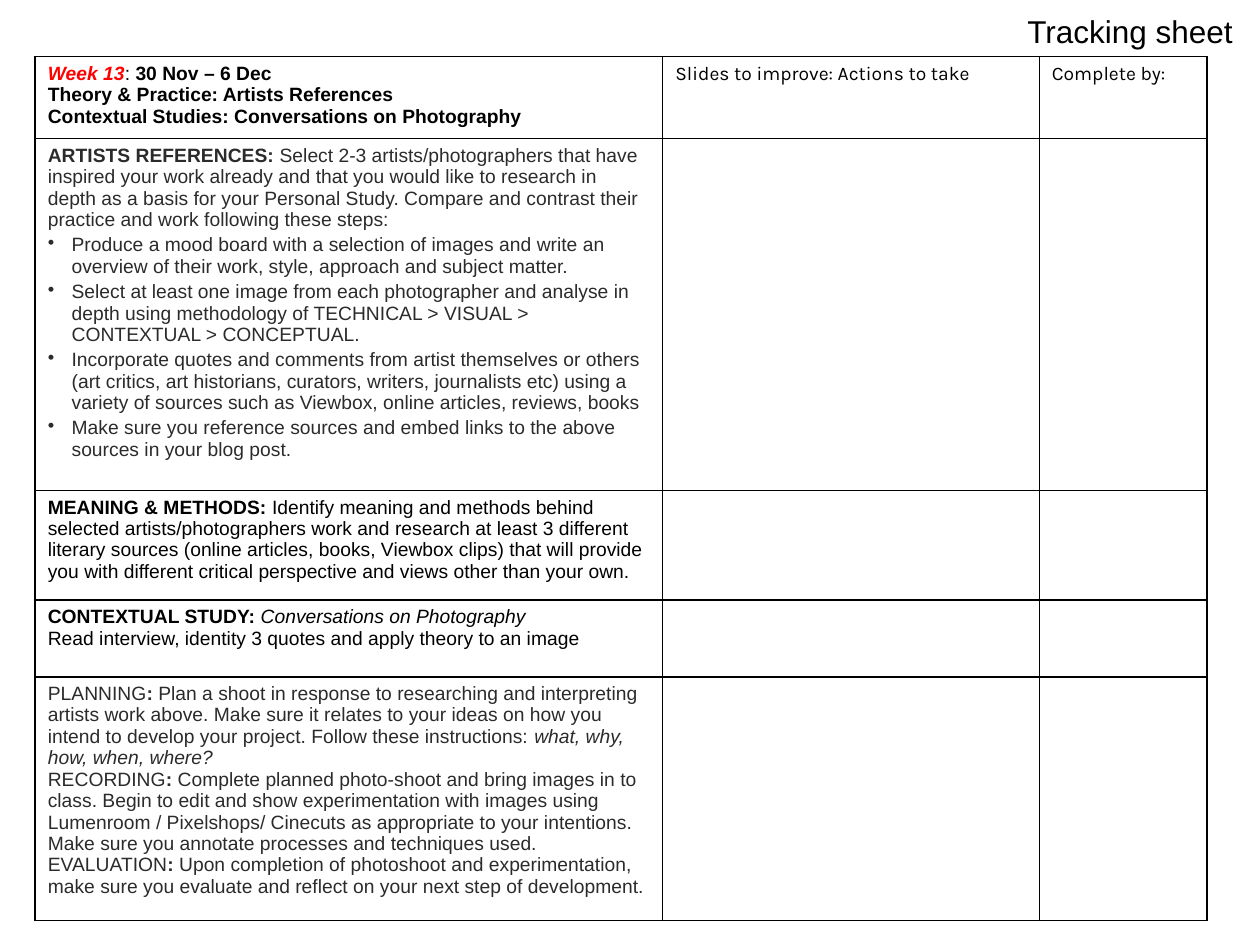
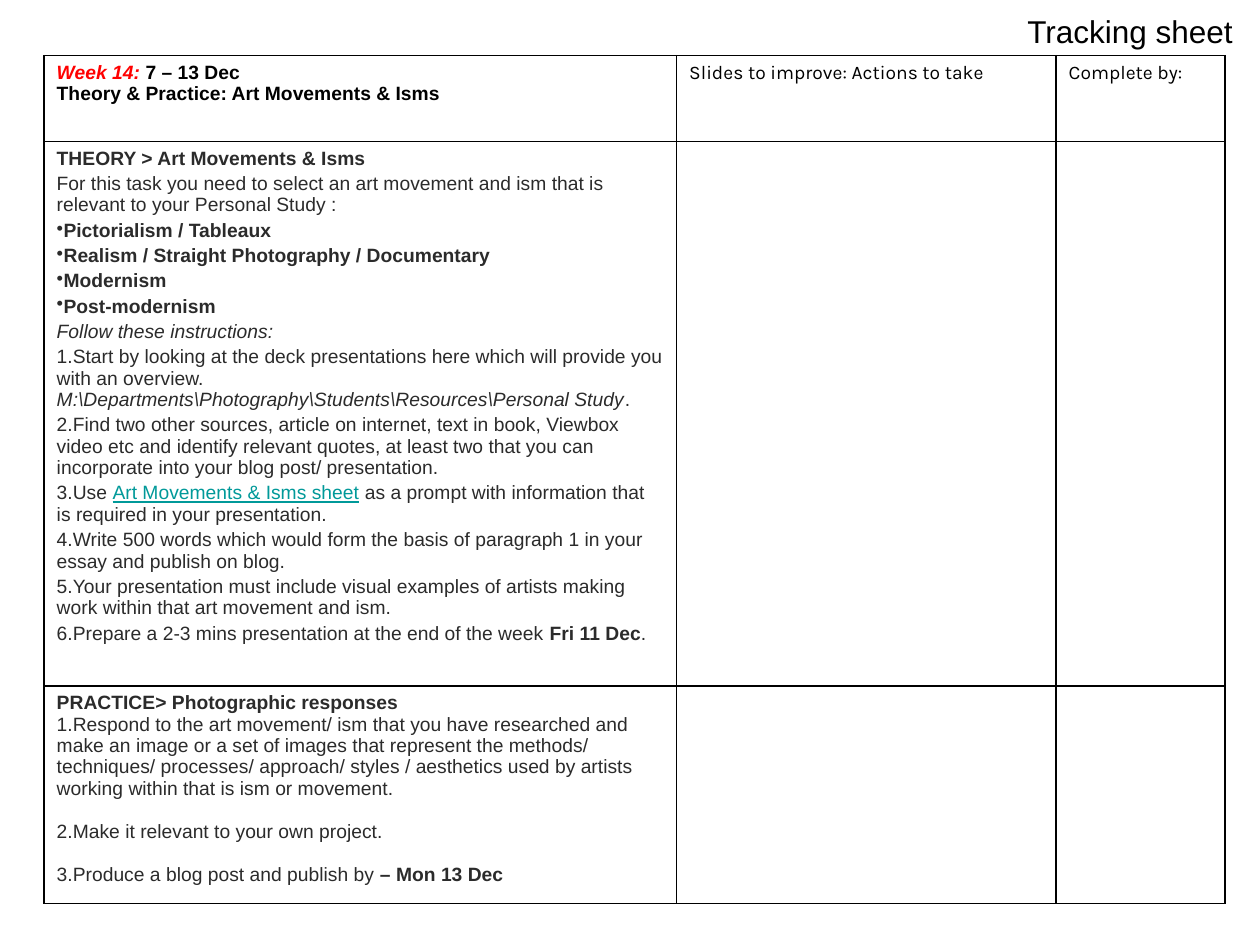
from copy import deepcopy

from pptx import Presentation
from pptx.dml.color import RGBColor
from pptx.enum.text import MSO_ANCHOR, PP_ALIGN
from pptx.oxml import parse_xml
from pptx.oxml.ns import nsdecls
from pptx.util import Cm, Pt

BLACK = RGBColor(0x00, 0x00, 0x00)
DARK = RGBColor(0x2B, 0x2B, 0x2B)
RED = RGBColor(0xFF, 0x00, 0x00)
TEAL = RGBColor(0x00, 0x99, 0x99)
RIGHT, MIDDLE = PP_ALIGN.RIGHT, MSO_ANCHOR.MIDDLE

BULLET = '<a:buChar {} char="•"/>'
NUMBER = '<a:buAutoNum {} type="arabicPeriod"/>'


def add_text(p, text, size=11, font="Arial", color=BLACK, bold=False,
             italic=False, underline=False):
    """Add formatted text to a paragraph; a newline becomes a line break."""
    for i, line in enumerate(text.split("\n")):
        if i:
            p.add_line_break()
        r = p.add_run()
        r.text = line
        f = r.font
        f.size, f.name, f.color.rgb = Pt(size), font, color
        f.bold, f.italic, f.underline = bold, italic, underline
        if i:
            r._r.getprevious().append(deepcopy(r._r.rPr))


def run(text, **fmt):
    return text, fmt


def bold(text):
    return run(text, bold=True)


def italic(text):
    return run(text, italic=True)


def para(*runs, mark=None, indent=0, before=0, after=0):
    """Describe a paragraph; plain strings are unformatted runs."""
    runs = [run(r) if isinstance(r, str) else r for r in runs]
    return dict(runs=runs, mark=mark, indent=indent, before=before, after=after)


def spaced(*runs, **fmt):
    return para(*runs, before=2.2, **fmt)


class TrackingDeck:
    def __init__(self):
        self.prs = Presentation()
        self.prs.slide_width, self.prs.slide_height = Cm(25.4), Cm(19.05)
        self.s = None

    def add_slide(self):
        self.s = self.prs.slides.add_slide(self.prs.slide_layouts[6])
        self.title("Tracking sheet")

    def title(self, text):
        tf = self.s.shapes.add_textbox(Cm(2.24), Cm(0.13), Cm(22.86), Cm(1)).text_frame
        tf.word_wrap, tf.vertical_anchor = True, MIDDLE
        p = tf.paragraphs[0]
        p.alignment = RIGHT
        add_text(p, text, size=18)

    def paragraph(self, p, item, **base):
        p.space_before, p.space_after = Pt(item["before"]), Pt(item["after"])
        if item["mark"]:
            pPr = p._p.get_or_add_pPr()
            pPr.set("marL", str(Cm(item["indent"])))
            pPr.set("indent", str(-Cm(item["indent"])))
            pPr.append(parse_xml(item["mark"].format(nsdecls("a"))))
        for text, fmt in item["runs"]:
            add_text(p, text, **{**base, **fmt})

    def cell(self, cell, items, **base):
        tcPr = cell._tc.get_or_add_tcPr()
        for side in "LRTB":
            tcPr.append(parse_xml(
                f'<a:ln{side} {nsdecls("a")} w="{Pt(1)}"><a:solidFill>'
                f'<a:srgbClr val="{BLACK}"/></a:solidFill></a:ln{side}>'))
        cell.fill.background()
        tf = cell.text_frame
        for i, item in enumerate(items):
            p = tf.add_paragraph() if i else tf.paragraphs[0]
            self.paragraph(p, item, **base)

    def table(self, left, top, widths, heights, heading, tasks):
        """Draw the sheet: a heading row, then one row for each (colour, text) task."""
        tbl = self.s.shapes.add_table(
            len(heights), len(widths), Cm(left), Cm(top),
            Cm(sum(widths)), Cm(sum(heights))).table
        tbl.first_row = tbl.horz_banding = False
        for col, width in zip(tbl.columns, widths):
            col.width = Cm(width)
        for row, height in zip(tbl.rows, heights):
            row.height = Cm(height)
        self.cell(tbl.cell(0, 0), heading, bold=True)
        for c, label in enumerate(["Slides to improve: Actions to take", "Complete by:"], 1):
            self.cell(tbl.cell(0, c), [para(label)], font="Karla")
        for r, (color, items) in enumerate(tasks, 1):
            self.cell(tbl.cell(r, 0), items, color=color)
            for c in (1, 2):
                self.cell(tbl.cell(r, c), [])


def week_13(deck):
    deck.add_slide()
    heading = [
        para(run("Week 13", color=RED, italic=True), run(": ", bold=False), "30 Nov – 6 Dec"),
        para("Theory & Practice: Artists References"),
        para("Contextual Studies: Conversations on Photography"),
    ]
    steps = [
        "Produce a mood board with a selection of images and write an overview of "
        "their work, style, approach and subject matter.",
        "Select at least one image from each photographer and analyse in depth using "
        "methodology of TECHNICAL > VISUAL > CONTEXTUAL > CONCEPTUAL.",
        "Incorporate quotes and comments from artist themselves or others (art critics, "
        "art historians, curators, writers, journalists etc) using a variety of sources "
        "such as Viewbox, online articles, reviews, books",
        "Make sure you reference sources and embed links to the above sources in your "
        "blog post.",
    ]
    references = [para(
        bold("ARTISTS REFERENCES:"),
        " Select 2-3 artists/photographers that have inspired your work already and that "
        "you would like to research in depth as a basis for your Personal Study. Compare "
        "and contrast their practice and work following these steps:")]
    references += [spaced(step, mark=BULLET, indent=0.48) for step in steps]
    meaning = [para(
        bold("MEANING & METHODS:"),
        " Identify meaning and methods behind selected artists/photographers work and "
        "research at least 3 different literary sources (online articles, books, Viewbox "
        "clips) that will provide you with different critical perspective and views other "
        "than your own.")]
    context = [para(
        bold("CONTEXTUAL STUDY: "), italic("Conversations on Photography"),
        "\nRead interview, identity 3 quotes and apply theory to an image")]
    shoot = [
        para("PLANNING", bold(":"),
             " Plan a shoot in response to researching and interpreting artists work above. "
             "Make sure it relates to your ideas on how you intend to develop your project. "
             "Follow these instructions: ", italic("what, why, how, when, where?")),
        para("RECORDING", bold(":"),
             " Complete planned photo-shoot and bring images in to class. Begin to edit and "
             "show experimentation with images using Lumenroom / Pixelshops/ Cinecuts as "
             "appropriate to your intentions. Make sure you annotate processes and "
             "techniques used."),
        para("EVALUATION", bold(":"),
             " Upon completion of photoshoot and experimentation, make sure you evaluate "
             "and reflect on your next step of development."),
    ]
    deck.table(0.71, 1.14, [12.65, 7.59, 3.38], [1.6, 6.94, 2.21, 1.55, 4.78], heading,
               [(DARK, references), (BLACK, meaning), (BLACK, context), (DARK, shoot)])


def week_14(deck):
    deck.add_slide()
    heading = [
        para(run("Week 14: ", color=RED, italic=True), "7 – 13 Dec"),
        para("Theory & Practice: Art Movements & Isms"),
    ]
    movements = ["Pictorialism / Tableaux", "Realism / Straight Photography / Documentary",
                 "Modernism", "Post-modernism"]
    steps = [
        ["Start by looking at the deck presentations here which will provide you with an "
         "overview.\n",
         italic(r"M:\Departments\Photography\Students\Resources\Personal Study"), "."],
        ["Find two other sources, article on internet, text in book, Viewbox video etc and "
         "identify relevant quotes, at least two that you can incorporate into your blog "
         "post/ presentation."],
        ["Use ", run("Art Movements & Isms sheet", color=TEAL, underline=True),
         " as a prompt with information that is required in your presentation."],
        ["Write 500 words which would form the basis of paragraph 1 in your essay and "
         "publish on blog."],
        ["Your presentation must include visual examples of artists making work within "
         "that art movement and ism."],
        ["Prepare a 2-3 mins presentation at the end of the week ", bold("Fri 11 Dec"), "."],
    ]
    theory = [
        para(bold("THEORY > Art Movements & Isms")),
        spaced("For this task you need to select an art movement and ism that is relevant "
               "to your Personal Study :"),
        *[spaced(bold(name), mark=BULLET) for name in movements],
        spaced(italic("Follow these instructions:")),
        *[spaced(*step, mark=NUMBER) for step in steps],
    ]
    practice = [
        para(bold("PRACTICE> Photographic responses")),
        para("Respond to the art movement/ ism that you have researched and make an image "
             "or a set of images that represent the methods/ techniques/ processes/ "
             "approach/ styles / aesthetics used by artists working within that is ism or "
             "movement.", mark=NUMBER, after=12.3),
        para("Make it relevant to your own project.", mark=NUMBER, after=12.3),
        para("Produce a blog post and publish by ", bold("– Mon 13 Dec"), mark=NUMBER),
    ]
    deck.table(0.89, 1.12, [12.75, 7.65, 3.4], [1.73, 10.26, 4.14], heading,
               [(DARK, theory), (DARK, practice)])


def main():
    deck = TrackingDeck()
    week_13(deck)
    week_14(deck)
    deck.prs.save("out.pptx")


if __name__ == "__main__":
    main()
